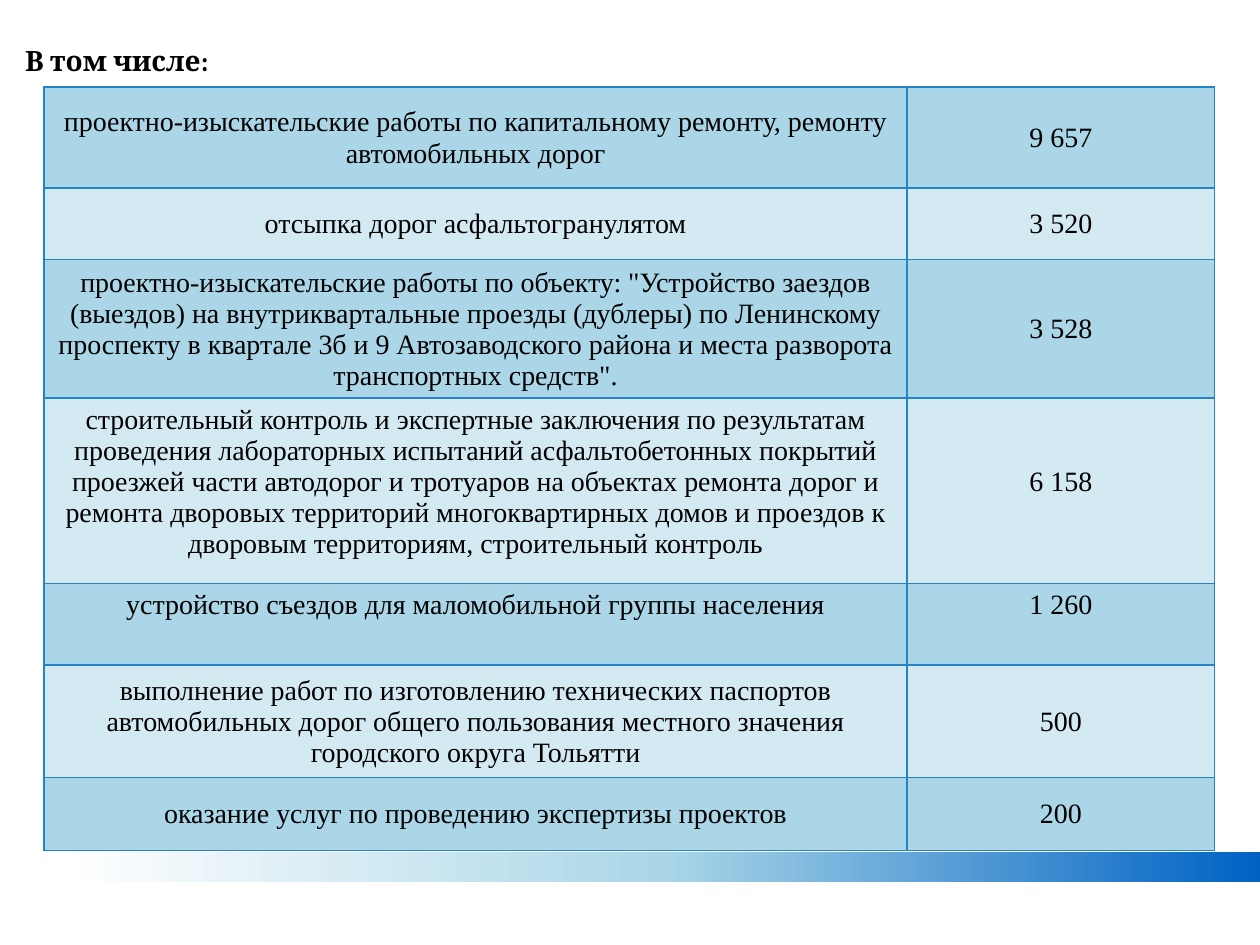
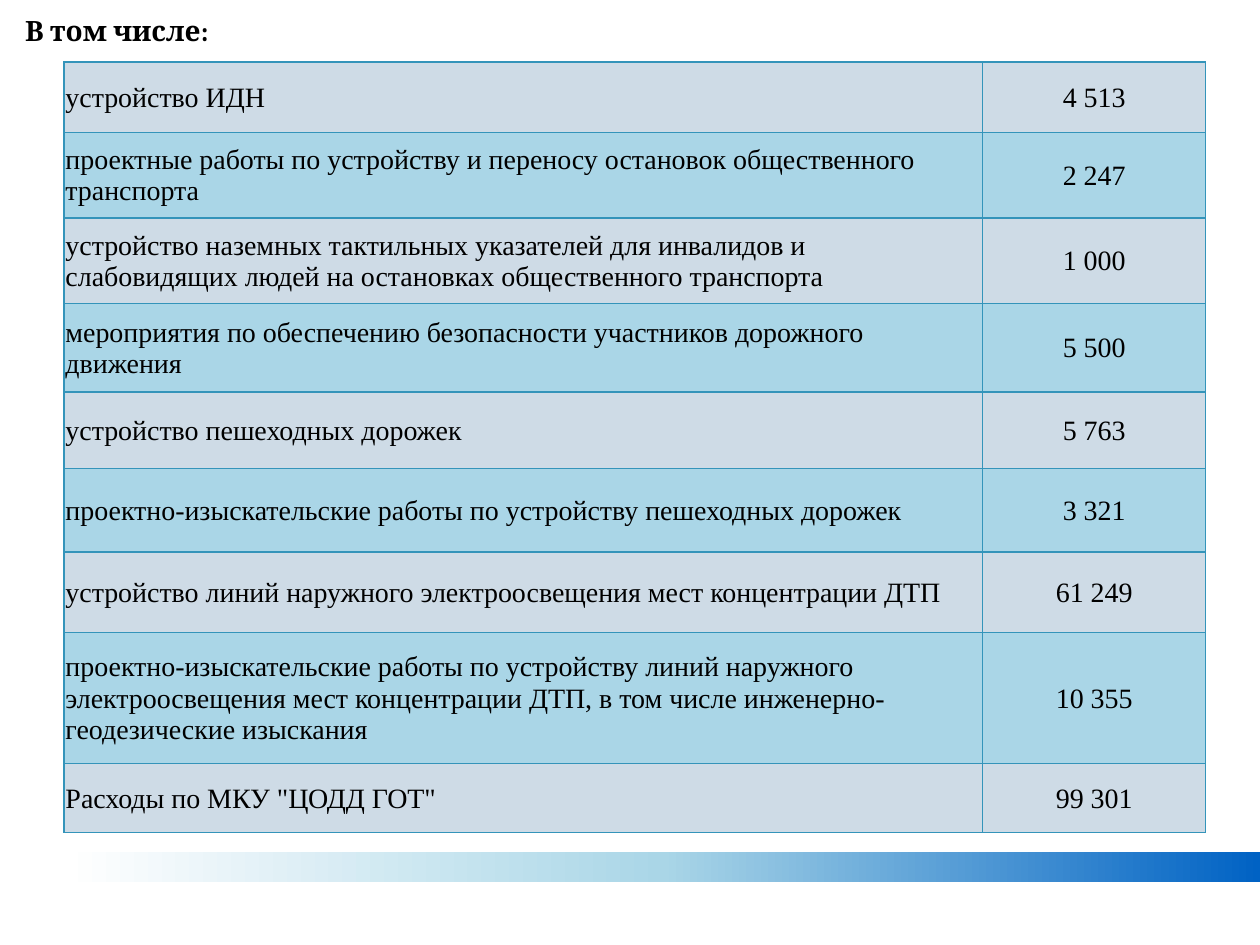
from copy import deepcopy

from lxml import etree
from pptx import Presentation
from pptx.dml.color import RGBColor
from pptx.enum.shapes import MSO_SHAPE
from pptx.enum.text import MSO_ANCHOR, PP_ALIGN
from pptx.oxml.ns import qn
from pptx.util import Inches, Pt

RECTANGLE = MSO_SHAPE.RECTANGLE
TOP, MIDDLE = MSO_ANCHOR.TOP, MSO_ANCHOR.MIDDLE
LEFT, CENTER = PP_ALIGN.LEFT, PP_ALIGN.CENTER

SKY = "AAD6E7"
BAND_STOPS = [(0, "0062C4"), (0.5, SKY), (1, "FFFFFF")]
TITLE_FONT = {"name": "Cambria", "size": Pt(16), "bold": True}
CELL_FONT = {"name": "Times New Roman", "size": Pt(16), "bold": False}

TIGHT = {
    "vertical_anchor": MIDDLE,
    "margin_left": Inches(0.01),
    "margin_top": Inches(0.01),
    "margin_right": Inches(0.01),
    "margin_bottom": 0,
}
PADDED = {
    "vertical_anchor": MIDDLE,
    "margin_left": Inches(0.1),
    "margin_top": Inches(0.05),
    "margin_right": Inches(0.1),
    "margin_bottom": Inches(0.05),
}
RAISED = {**PADDED, "vertical_anchor": TOP}
LOWERED = {**RAISED, "margin_top": Inches(0.54)}

PAGES = [
    {
        "title_rows": 9.9,
        "origin": (3.5, 6.9),
        "columns": (68.5, 24.4),
        "label_alignment": CENTER,
        "fills": (SKY, "D4EAF3"),
        "border": "2683C6",
        "special_cells": {
            (3, 0): RAISED, (3, 1): LOWERED,
            (4, 0): RAISED, (4, 1): RAISED,
            (6, 0): PADDED, (6, 1): PADDED,
        },
        "expenses": [
            (8, "проектно-изыскательские работы по капитальному ремонту, ремонту автомобильных дорог", "9 657"),
            (5.7, "отсыпка дорог асфальтогранулятом", "3 520"),
            (11, "проектно-изыскательские работы по объекту: \"Устройство заездов (выездов) "
                 "на внутриквартальные проезды (дублеры) по Ленинскому проспекту в квартале 3б и 9 "
                 "Автозаводского района и места разворота транспортных средств\".", "3 528"),
            (14.7, "строительный контроль и экспертные заключения по результатам проведения "
                   "лабораторных испытаний асфальтобетонных покрытий проезжей части автодорог и тротуаров "
                   "на объектах ремонта дорог и ремонта дворовых территорий многоквартирных домов "
                   "и проездов к дворовым территориям, строительный контроль", "6 158"),
            (6.5, "устройство съездов для маломобильной группы населения", "1 260"),
            (8.9, "выполнение работ по изготовлению технических паспортов автомобильных дорог "
                  "общего пользования местного значения городского округа Тольятти", "500"),
            (5.8, "оказание услуг по проведению экспертизы проектов", "200"),
        ],
    },
    {
        "title_rows": 5.2,
        "origin": (5.1, 4.9),
        "columns": (72.9, 17.7),
        "label_alignment": LEFT,
        "fills": ("CEDBE6", SKY),
        "border": "3494BA",
        "special_cells": {},
        "expenses": [
            (5.6, "устройство ИДН", "4 513"),
            (6.8, "проектные работы по устройству и переносу остановок общественного транспорта", "2 247"),
            (6.8, "устройство наземных тактильных указателей для инвалидов и слабовидящих людей "
                  "на остановках общественного транспорта", "1 000"),
            (7, "мероприятия по обеспечению безопасности участников дорожного движения", "5 500"),
            (6.1, "устройство пешеходных дорожек", "5 763"),
            (6.6, "проектно-изыскательские работы по устройству пешеходных дорожек", "3 321"),
            (6.4, "устройство линий наружного электроосвещения мест концентрации ДТП", "61 249"),
            (10.4, "проектно-изыскательские работы по устройству линий наружного электроосвещения "
                   "мест концентрации ДТП, в том числе инженерно-геодезические изыскания", "10 355"),
            (5.5, "Расходы по МКУ \"ЦОДД ГОТ\"", "99 301"),
        ],
    },
]


def color(value):
    return RGBColor.from_string(value)


def write(paragraph, text, font_format, alignment):
    paragraph.text = text
    paragraph.alignment = alignment
    font = paragraph.runs[0].font
    for name, value in font_format.items():
        setattr(font, name, value)
    font.color.rgb = color("000000")


presentation = Presentation()
presentation.slide_width = Inches(10)
presentation.slide_height = Inches(7.5)
COLUMN = presentation.slide_width // 100
ROW = presentation.slide_height // 75

for page in PAGES:
    slide = presentation.slides.add_slide(presentation.slide_layouts[5])

    title = slide.shapes.title
    title.left, title.top = 0, 0
    title.width, title.height = presentation.slide_width, int(page["title_rows"] * ROW)
    title.text_frame.vertical_anchor = MIDDLE
    title.text_frame.margin_left = 2 * COLUMN
    title_paragraph = title.text_frame.paragraphs[0]
    write(title_paragraph, "В том числе:", TITLE_FONT, LEFT)
    title_paragraph.line_spacing = 0.9

    expenses = page["expenses"]
    left, top = page["origin"]
    width = sum(page["columns"])
    height = sum(expense[0] for expense in expenses)
    table = slide.shapes.add_table(
        len(expenses), len(page["columns"]),
        int(left * COLUMN), int(top * ROW), int(width * COLUMN), int(height * ROW),
    ).table
    table.first_row = False
    table.horz_banding = False
    for table_column, column_width in zip(table.columns, page["columns"]):
        table_column.width = int(column_width * COLUMN)

    for row_index, (row_height, *texts) in enumerate(expenses):
        table.rows[row_index].height = int(row_height * ROW)
        alignments = (page["label_alignment"], CENTER)
        for column_index, (text, alignment) in enumerate(zip(texts, alignments)):
            cell = table.cell(row_index, column_index)
            cell_format = page["special_cells"].get((row_index, column_index), TIGHT)
            for name, value in cell_format.items():
                setattr(cell, name, value)
            write(cell.text_frame.paragraphs[0], text, CELL_FONT, alignment)
            cell.fill.solid()
            cell.fill.fore_color.rgb = color(page["fills"][row_index % 2])
            properties = cell._tc.get_or_add_tcPr()
            for position, side in enumerate(("lnL", "lnR", "lnT", "lnB")):
                line = etree.Element(qn(f"a:{side}"), w=str(Pt(1)))
                solid = etree.SubElement(line, qn("a:solidFill"))
                etree.SubElement(solid, qn("a:srgbClr"), val=page["border"])
                properties.insert(position, line)

    band_left = int(5.1 * COLUMN)
    band = slide.shapes.add_shape(
        RECTANGLE, band_left, int(67.6 * ROW),
        presentation.slide_width - band_left, int(2.4 * ROW),
    )
    band.shadow.inherit = False
    band.line.fill.background()
    band.fill.gradient()
    band.fill.gradient_angle = 180
    stop_list = band.element.spPr.find(f".//{qn('a:gsLst')}")
    stop_list.insert(1, deepcopy(stop_list[0]))
    for stop, (position, stop_color) in zip(band.fill.gradient_stops, BAND_STOPS):
        stop.position = position
        stop.color.rgb = color(stop_color)

presentation.save("out.pptx")
